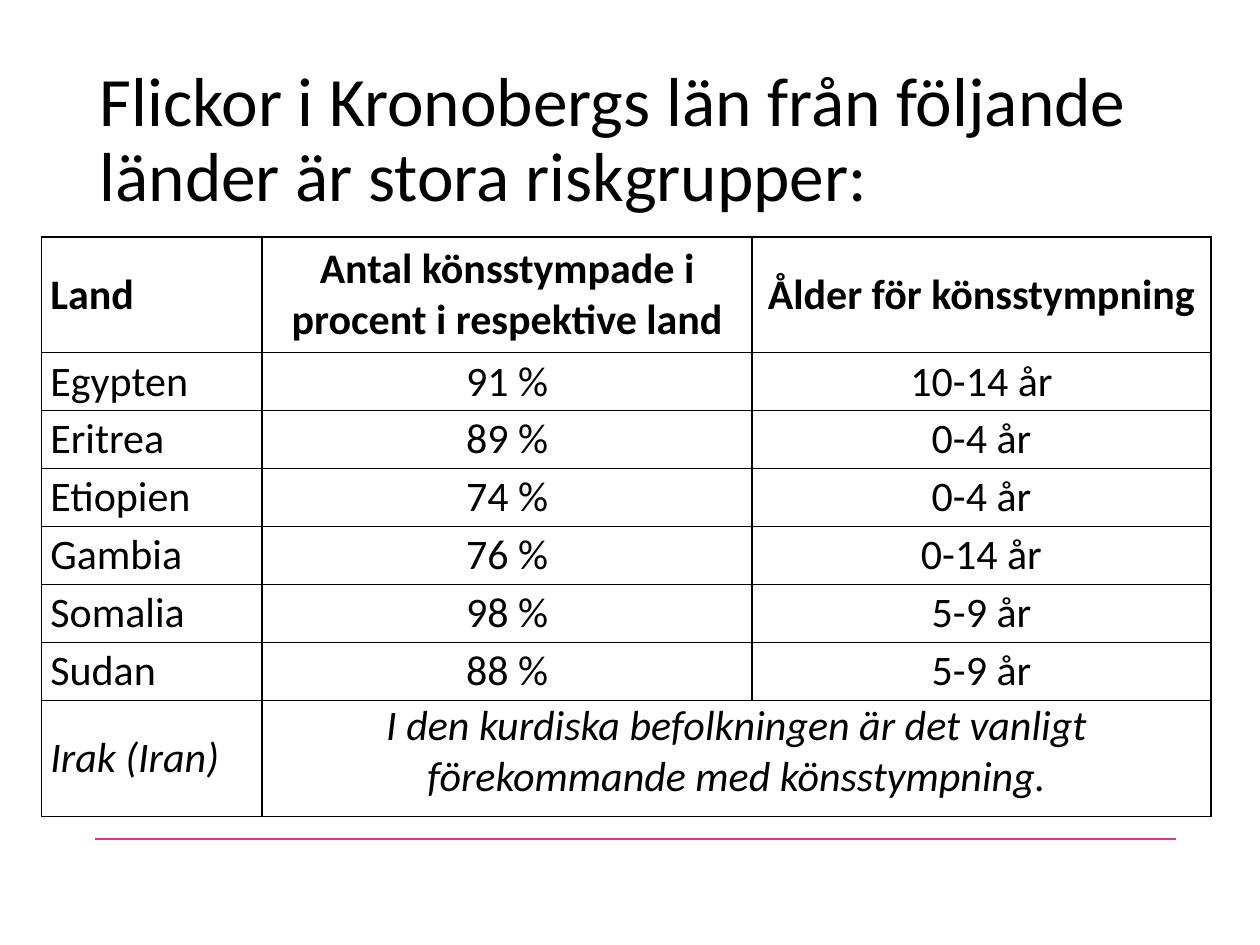
from lxml import etree
from pptx import Presentation
from pptx.dml.color import RGBColor
from pptx.enum.shapes import MSO_CONNECTOR
from pptx.enum.text import MSO_ANCHOR, MSO_AUTO_SIZE, PP_ALIGN
from pptx.oxml import parse_xml
from pptx.oxml.ns import nsdecls, qn
from pptx.util import Inches, Pt

BLACK = RGBColor(0x00, 0x00, 0x00)
PINK = RGBColor(0xE1, 0x32, 0x88)
FONT = "Calibri"

TITLE = "Flickor i Kronobergs län från följande länder är stora riskgrupper:"
HEADER = ("Land", "Antal könsstympade i procent i respektive land",
          "Ålder för könsstympning")
COUNTRIES = [
    ("Egypten", "91 %", "10-14 år"),
    ("Eritrea", "89 %", "0-4 år"),
    ("Etiopien", "74 %", "0-4 år"),
    ("Gambia", "76 %", "0-14 år"),
    ("Somalia", "98 %", "5-9 år"),
    ("Sudan", "88 %", "5-9 år"),
]
REMARK = ("Irak (Iran)", "I den kurdiska befolkningen är det vanligt "
          "förekommande med könsstympning.")
COL_WIDTHS = (1.75, 3.89, 3.64)
ROW_HEIGHT = 0.46


def style_font(p, size, bold=False, italic=False):
    p.font.name = FONT
    p.font.size = Pt(size)
    p.font.bold = bold
    p.font.italic = italic
    p.font.color.rgb = BLACK


def add_title(slide, left, top, width, height):
    sp = slide.shapes.title
    sp.left, sp.top, sp.width, sp.height = map(Inches, (left, top, width, height))
    tf = sp.text_frame
    tf.text = TITLE
    tf.word_wrap = True
    tf.auto_size = MSO_AUTO_SIZE.NONE
    tf.vertical_anchor = MSO_ANCHOR.MIDDLE
    p = tf.paragraphs[0]
    p.alignment = PP_ALIGN.LEFT
    p.line_spacing = 0.9
    style_font(p, 39.6)


def set_borders(cell):
    """Draw a thin black line on all four sides, beneath the fill in the XML."""
    tc_pr = cell._tc.get_or_add_tcPr()
    for i, side in enumerate(("lnL", "lnR", "lnT", "lnB")):
        tc_pr.insert(i, parse_xml(
            f'<a:{side} {nsdecls("a")} w="{Pt(1)}"><a:solidFill>'
            f'<a:srgbClr val="{BLACK}"/></a:solidFill></a:{side}>'))


def fill_cell(cell, text, align, **emphasis):
    cell.text = text
    cell.vertical_anchor = MSO_ANCHOR.MIDDLE
    p = cell.text_frame.paragraphs[0]
    p.alignment = align
    style_font(p, 24, **emphasis)


def add_risk_table(slide, left, top):
    rows = [HEADER, *COUNTRIES, REMARK]
    last = len(rows) - 1
    heights = [ROW_HEIGHT * (2 if r in (0, last) else 1) for r in range(len(rows))]
    table = slide.shapes.add_table(
        len(rows), len(COL_WIDTHS), Inches(left), Inches(top),
        Inches(sum(COL_WIDTHS)), Inches(sum(heights))).table
    table.first_row = table.horz_banding = False
    for col, width in zip(table.columns, COL_WIDTHS):
        col.width = Inches(width)
    for row, height in zip(table.rows, heights):
        row.height = Inches(height)

    for cell in table.iter_cells():
        cell.margin_left = cell.margin_right = Inches(0.07)
        cell.margin_top = cell.margin_bottom = 0
        cell.fill.background()
        set_borders(cell)

    table.cell(last, 1).merge(table.cell(last, 2))
    for r, texts in enumerate(rows):
        for c, text in enumerate(texts):
            fill_cell(table.cell(r, c), text,
                      PP_ALIGN.CENTER if c else PP_ALIGN.LEFT,
                      bold=r == 0, italic=r == last)
    table.cell(last, 1).vertical_anchor = MSO_ANCHOR.TOP


def add_footer_rule(slide, left, right, y):
    line = slide.shapes.add_connector(
        MSO_CONNECTOR.STRAIGHT, Inches(left), Inches(y), Inches(right), Inches(y))
    line.line.color.rgb = PINK
    line.line.width = Pt(1.5)
    etree.SubElement(line._element.spPr, qn("a:effectLst"))


def main():
    prs = Presentation()
    prs.slide_width, prs.slide_height = Inches(10), Inches(7.5)
    slide = prs.slides.add_slide(prs.slide_layouts[5])
    add_footer_rule(slide, 0.75, 9.33, 6.66)
    add_title(slide, 0.69, 0.4, 8.62, 1.45)
    add_risk_table(slide, 0.33, 1.88)
    prs.save("out.pptx")


if __name__ == "__main__":
    main()
